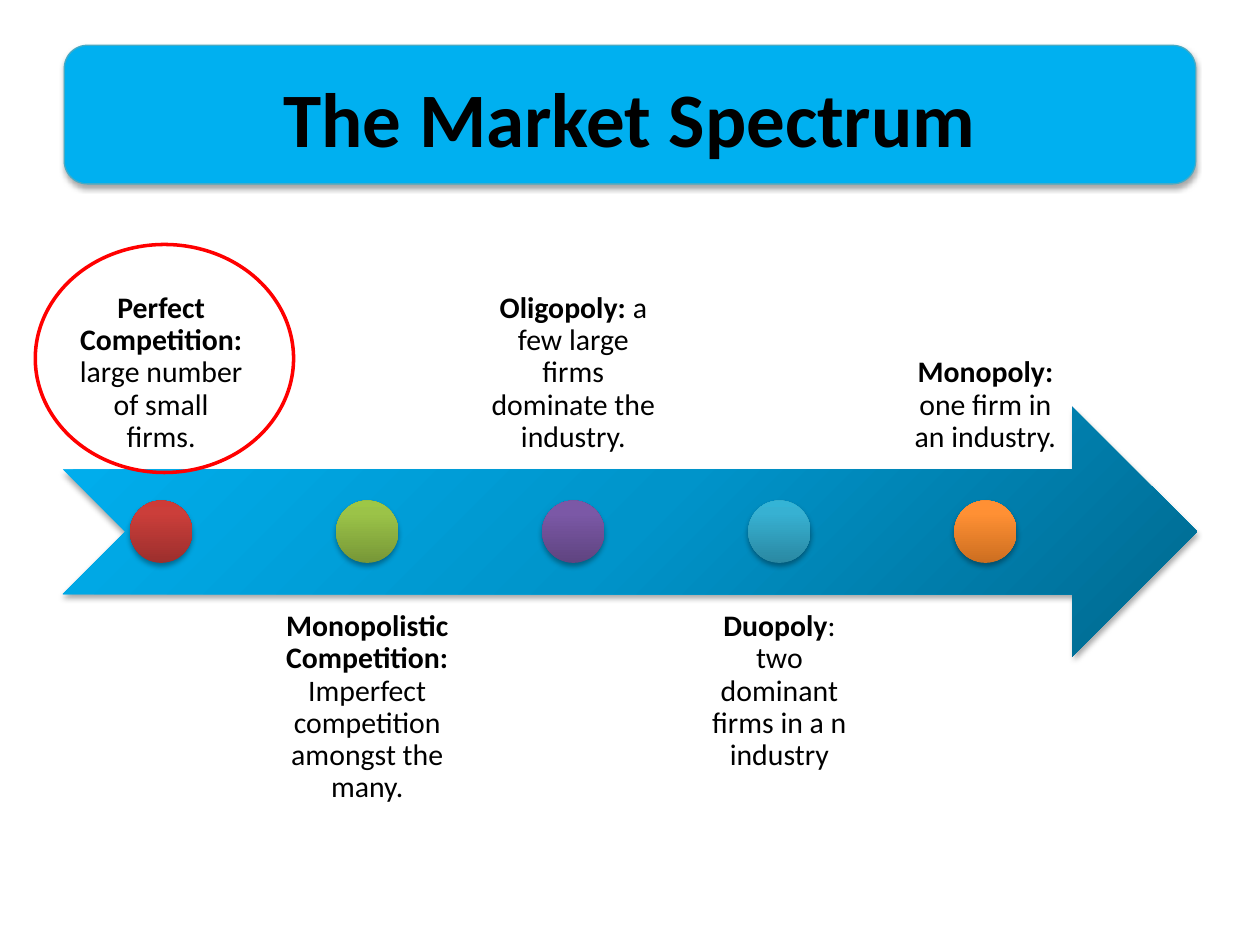
from lxml import etree
from pptx import Presentation, util as u
from pptx.dml.color import RGBColor
from pptx.enum import shapes, text
from pptx.oxml import ns

WIDTH, HEIGHT = 10, 7.5
MARGIN = 0.05 * WIDTH
SPAN = WIDTH - 2 * MARGIN
ARROW_TOP, ARROW_HEIGHT = 3.23, 1.98
COLUMN = 0.9 * SPAN / 5.2
STEP = 1.05 * COLUMN
DOT = ARROW_HEIGHT / 4
LABEL_TOPS = (1.75, 4.72)

MARKETS = [
    ("Perfect Competition: ", "large number of small firms.", ("9C2F2D", "CB3E3A", "CE3B37")),
    ("Monopolistic Competition: ", "Imperfect competition amongst the many.", ("779737", "9BC348", "9DC746")),
    ("Oligopoly: ", "a few large firms dominate the industry.", ("5F4480", "7B58A6", "7C57A8")),
    ("Duopoly", ": two dominant firms in a n industry", ("2A88A2", "37B1D2", "34B4D6")),
    ("Monopoly: ", "one firm in an industry.", ("CC6E20", "FF9034", "FF9136")),
]


def color(code):
    return RGBColor.from_string(code)


def box(*lengths):
    return [u.Inches(length) for length in lengths]


def add_node(parent, tag, **attributes):
    node = etree.SubElement(parent, ns.qn(tag))
    for key, value in attributes.items():
        node.set(key, str(value))
    return node


def add_outline(slide, kind, place, fill=None, line=None, weight=0):
    outline = slide.shapes.add_shape(kind, *box(*place))
    outline.shadow.inherit = False
    if fill:
        outline.fill.solid()
        outline.fill.fore_color.rgb = color(fill)
    else:
        outline.fill.background()
    if line:
        outline.line.color.rgb = color(line)
        outline.line.width = u.Pt(weight)
    else:
        outline.line.fill.background()
    return outline


def add_shadow(outline):
    effects = outline._element.spPr.find(ns.qn("a:effectLst"))
    shadow = add_node(effects, "a:outerShdw", blurRad=40000, dist=23000, dir=5400000, rotWithShape=0)
    black = add_node(shadow, "a:srgbClr", val="000000")
    add_node(black, "a:alpha", val=35000)


def add_gradient(outline, stops, radial=False):
    properties = outline._element.spPr
    gradient = etree.Element(ns.qn("a:gradFill"), rotWithShape="1")
    stop_list = add_node(gradient, "a:gsLst")
    for position, code in stops:
        stop = add_node(stop_list, "a:gs", pos=position * 1000)
        add_node(stop, "a:srgbClr", val=code)
    if radial:
        circle = add_node(gradient, "a:path", path="circle")
        add_node(circle, "a:fillToRect", l=100000, t=100000)
    else:
        add_node(gradient, "a:lin", ang=16200000, scaled=0)
    properties.replace(properties.find(ns.qn("a:noFill")), gradient)


def add_text(slide, place, runs, size, anchor, inset, spacing=1.0):
    frame = slide.shapes.add_textbox(*box(*place)).text_frame
    frame.word_wrap = True
    frame.vertical_anchor = anchor
    frame.margin_left = frame.margin_right = u.Inches(inset)
    frame.margin_top = frame.margin_bottom = u.Inches(inset)
    paragraph = frame.paragraphs[0]
    paragraph.alignment = text.PP_ALIGN.CENTER
    paragraph.line_spacing = spacing
    for words, bold in runs:
        run = paragraph.add_run()
        run.text = words
        run.font.name = "Calibri"
        run.font.size = u.Pt(size)
        run.font.bold = bold
        run.font.color.rgb = color("000000")


def add_title(slide):
    banner = add_outline(slide, shapes.MSO_SHAPE.ROUNDED_RECTANGLE,
                         (0.51, 0.36, 8.98, 1.1), "00B0F0", "46AAC5", 0.75)
    add_shadow(banner)
    add_text(slide, (MARGIN, 0.04 * HEIGHT, SPAN, 1.25), [("The Market Spectrum", True)],
             44, text.MSO_ANCHOR.MIDDLE, 0.1)


def add_arrow(slide):
    arrow = add_outline(slide, shapes.MSO_SHAPE.NOTCHED_RIGHT_ARROW,
                        (MARGIN, ARROW_TOP, SPAN, ARROW_HEIGHT))
    add_gradient(arrow, [(0, "00688E"), (50, "0094CA"), (100, "00B0F0")], radial=True)
    add_shadow(arrow)


def add_market(slide, index, name, description, shades):
    left = MARGIN + index * STEP
    below = index % 2
    anchor = text.MSO_ANCHOR.TOP if below else text.MSO_ANCHOR.BOTTOM
    add_text(slide, (left, LABEL_TOPS[below], COLUMN, ARROW_HEIGHT),
             [(name, True), (description, False)], 17, anchor, 0.13, 0.9)
    dot = add_outline(slide, shapes.MSO_SHAPE.OVAL,
                      (left + (COLUMN - DOT) / 2, ARROW_TOP + (ARROW_HEIGHT - DOT) / 2, DOT, DOT))
    add_gradient(dot, zip((0, 80, 100), shades))
    add_shadow(dot)


def main():
    deck = Presentation()
    deck.slide_width, deck.slide_height = box(WIDTH, HEIGHT)
    slide = deck.slides.add_slide(deck.slide_layouts[6])
    add_title(slide)
    add_arrow(slide)
    for index, market in enumerate(MARKETS):
        add_market(slide, index, *market)
    add_outline(slide, shapes.MSO_SHAPE.OVAL, (0.28, 1.94, 2.05, 1.81), line="FF0000", weight=2)
    deck.save("out.pptx")


if __name__ == "__main__":
    main()
